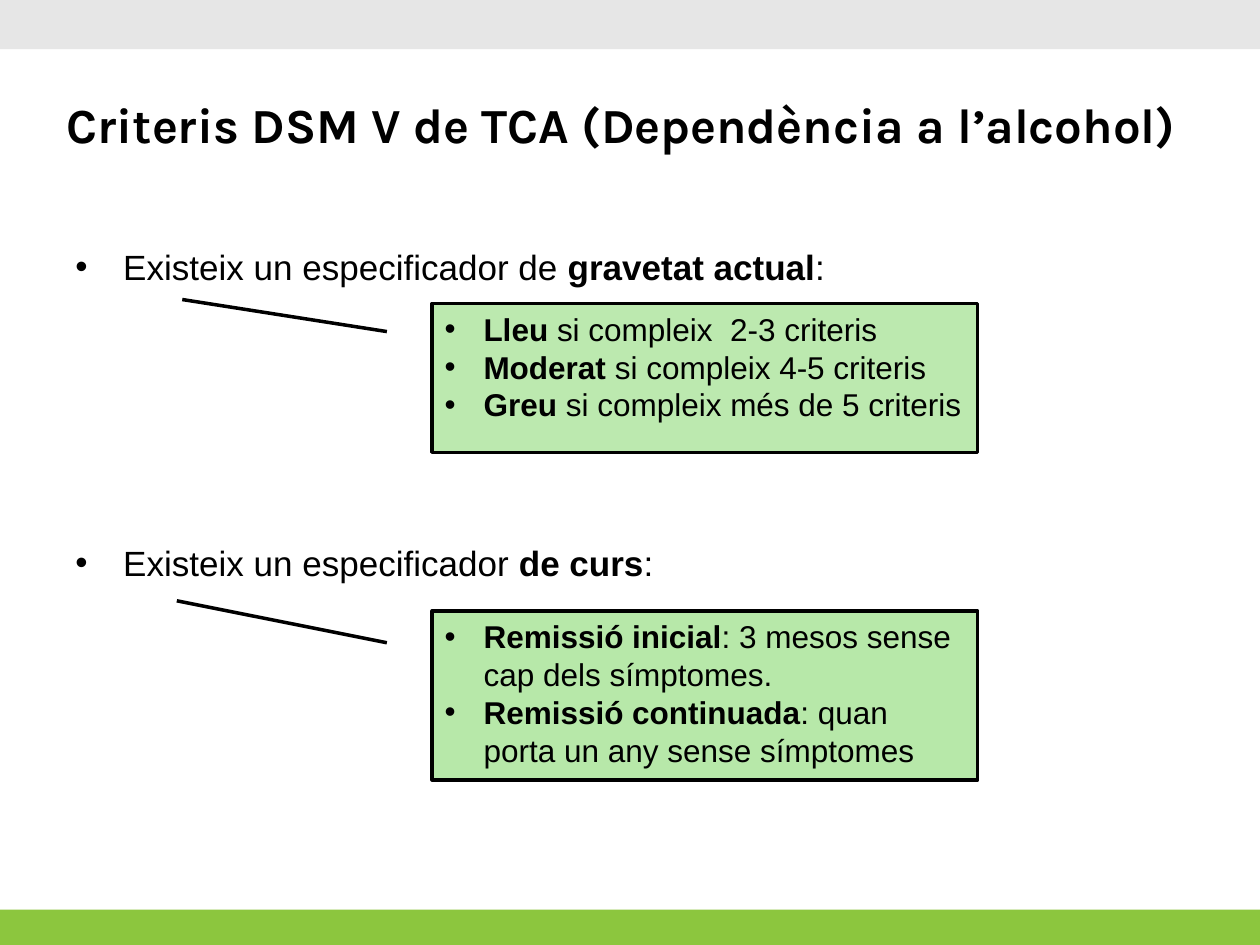
import pptx
import pptx.util
import pptx.dml.color
import pptx.enum.shapes
import pptx.enum.text
import pptx.oxml.ns
import lxml.etree

Inches = pptx.util.Inches
RGBColor = pptx.dml.color.RGBColor
MSO_SHAPE = pptx.enum.shapes.MSO_SHAPE
MSO_ANCHOR = pptx.enum.text.MSO_ANCHOR
qn = pptx.oxml.ns.qn

BLACK = RGBColor(0x00, 0x00, 0x00)
GREY = RGBColor(0xE6, 0xE6, 0xE6)
GREEN = RGBColor(0x8C, 0xC6, 0x3E)
PALE_GREEN = RGBColor(0xA1, 0xE1, 0x8F)


def write(box, paragraphs, size=18, font="Arial", indent=0, gap=0, anchor=MSO_ANCHOR.TOP):
    frame = box.text_frame
    frame.word_wrap = True
    frame.vertical_anchor = anchor
    for index, spans in enumerate(paragraphs):
        para = frame.paragraphs[0] if index == 0 else frame.add_paragraph()
        para.alignment = pptx.enum.text.PP_ALIGN.LEFT
        para.space_before = pptx.util.Pt(gap if index else 0)
        if indent:
            properties = para._p.get_or_add_pPr()
            properties.set("marL", str(Inches(indent)))
            properties.set("indent", str(-Inches(indent)))
            bullet_font = lxml.etree.SubElement(properties, qn("a:buFont"))
            bullet_font.set("typeface", "Arial")
            lxml.etree.SubElement(properties, qn("a:buChar")).set("char", "•")
        for text, bold in spans:
            span = para.add_run()
            span.text = text
            span.font.name = font
            span.font.size = pptx.util.Pt(size)
            span.font.bold = bold
            span.font.color.rgb = BLACK


deck = pptx.Presentation()
deck.slide_width = Inches(10)
deck.slide_height = Inches(7.5)
page = deck.slides.add_slide(deck.slide_layouts[6])

for top, height, color in [(7.22, 0.28, GREEN), (0, 0.39, GREY)]:
    band = page.shapes.add_shape(
        MSO_SHAPE.RECTANGLE, Inches(0), Inches(top), Inches(10), Inches(height))
    band.shadow.inherit = False
    band.fill.solid()
    band.fill.fore_color.rgb = color
    band.line.fill.background()

title = page.shapes.add_textbox(Inches(0.43), Inches(0.36), Inches(9.3), Inches(1.25))
write(title, [[("Criteris DSM V de TCA (Dependència a l’alcohol)", True)]],
      size=28, font="Karla", anchor=MSO_ANCHOR.MIDDLE)

body = page.shapes.add_textbox(Inches(0.5), Inches(1.9), Inches(9), Inches(4.92))
write(body, [
    [("Existeix un especificador de ", False), ("gravetat actual", True), (":", False)],
    [("Existeix un especificador", False), (" de curs", True), (":", False)],
], size=20, indent=0.38, gap=145)

callouts = [
    (2.41, 1.18, 71, (0.188, -0.083, -0.028, -0.458), [
        [("Lleu", True), (" si compleix  2-3 criteris", False)],
        [("Moderat ", True), ("si compleix 4-5 criteris", False)],
        [("Greu ", True), ("si compleix més de 5 criteris", False)],
    ]),
    (4.85, 1.34, 76, (0.188, -0.083, -0.061, -0.468), [
        [("Remissió inicial", True), (": 3 mesos sense cap dels símptomes.", False)],
        [("Remissió continuada", True), (": quan porta un any sense símptomes", False)],
    ]),
]
for top, height, opacity, pointer, paragraphs in callouts:
    callout = page.shapes.add_shape(
        MSO_SHAPE.LINE_CALLOUT_1, Inches(3.43), Inches(top), Inches(4.33), Inches(height))
    callout.shadow.inherit = False
    for index, value in enumerate(pointer):
        callout.adjustments[index] = value
    callout.fill.solid()
    callout.fill.fore_color.rgb = PALE_GREEN
    fill_color = callout._element.spPr.find(qn("a:solidFill")).find(qn("a:srgbClr"))
    lxml.etree.SubElement(fill_color, qn("a:alpha")).set("val", str(opacity * 1000))
    callout.line.color.rgb = BLACK
    callout.line.width = pptx.util.Pt(2)
    write(callout, paragraphs, indent=0.31)

deck.save("out.pptx")
